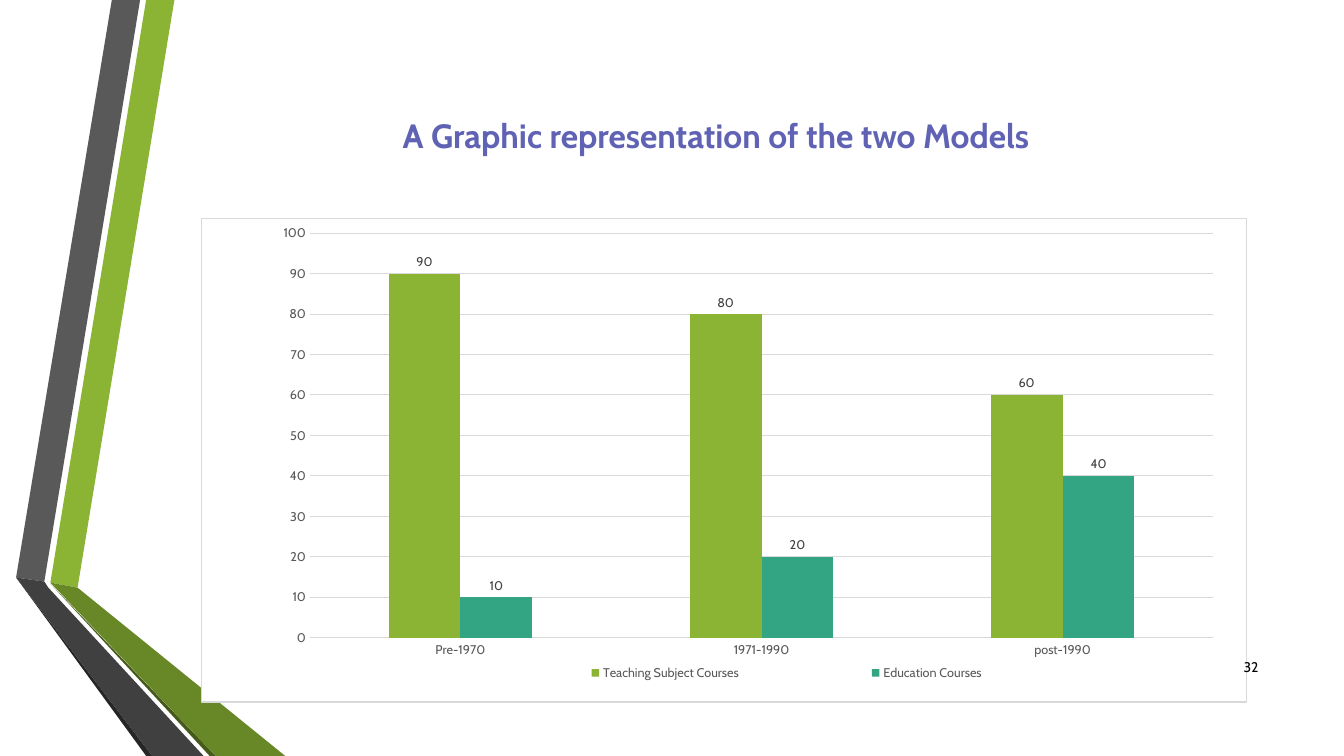
import dataclasses
from typing import Any

import pptx
import pptx.chart.data
import pptx.dml.color
import pptx.enum.chart
import pptx.enum.shapes
import pptx.enum.text
import pptx.oxml
import pptx.oxml.ns
import pptx.util

Inches = pptx.util.Inches
Pt = pptx.util.Pt
qn = pptx.oxml.ns.qn
CHART = pptx.enum.chart
ALIGN = pptx.enum.text.PP_ALIGN
FONT = "Cabin"
GREY, RULE = "595959", "D9D9D9"


@dataclasses.dataclass
class Band:
    fill: str
    points: list[tuple[float, float]]


@dataclasses.dataclass
class Series:
    name: str
    values: list[int]
    fill: str


BANDS = [
    Band("8BB434", [(0.5, 5.78), (0.77, 5.83), (1.73, 0), (1.45, 0)]),
    Band(GREY, [(1.39, 0), (1.11, 0), (0.16, 5.73), (0.44, 5.77)]),
    Band("262626", [(0.16, 5.73), (1.45, 7.5), (1.51, 7.5)]),
    Band("465A1A", [(0.5, 5.79), (2.08, 7.5), (2.14, 7.5)]),
    Band("688727", [(0.5, 5.78), (2.14, 7.5), (2.83, 7.5), (0.77, 5.83)]),
    Band("404040", [(2.02, 7.5), (0.48, 5.83), (0.44, 5.77), (0.16, 5.73),
                    (1.51, 7.5)]),
]
PERIODS = ["Pre-1970", "1971-1990", "post-1990"]
COURSES = [
    Series("Teaching Subject Courses", [90, 80, 60], "8BB434"),
    Series("Education Courses", [10, 20, 40], "33A583"),
]


def rgb(code: str) -> Any:
    return pptx.dml.color.RGBColor.from_string(code)


def apply(target: Any, values: dict[str, Any]) -> None:
    for name, value in values.items():
        setattr(target, name, value)


def style(font: Any, size: float, color: str, bold: bool = False) -> None:
    apply(font, {"name": FONT, "size": Pt(size), "bold": bold})
    font.color.rgb = rgb(color)


def place(shape: Any, left: float, top: float, width: float, height: float) -> None:
    apply(shape, {"left": Inches(left), "top": Inches(top),
                  "width": Inches(width), "height": Inches(height)})


def write(shape: Any, text: str, align: Any, size: float, color: str,
          bold: bool = False) -> None:
    frame = shape.text_frame
    apply(frame, {"word_wrap": True,
                  "vertical_anchor": pptx.enum.text.MSO_ANCHOR.MIDDLE})
    line = frame.paragraphs[0]
    line.alignment = align
    run = line.add_run()
    run.text = text
    style(run.font, size, color, bold)


def draw_band(slide: Any, band: Band) -> None:
    first, *rest = [(Inches(x), Inches(y)) for x, y in band.points]
    path = slide.shapes.build_freeform(*first)
    path.add_line_segments(rest, close=True)
    shape = path.convert_to_shape()
    shape.shadow.inherit = False
    shape.fill.solid()
    shape.fill.fore_color.rgb = rgb(band.fill)
    shape.line.fill.background()


def set_layout(parent: Any, index: int, box: tuple[float, ...], inner: bool) -> None:
    """Fix the place of a chart part, in fractions of the chart."""
    for old in parent.findall(qn("c:layout")):
        parent.remove(old)
    target = '<c:layoutTarget val="inner"/>' if inner else ""
    modes = "".join(f'<c:{key}Mode val="edge"/>' for key in "xy")
    sizes = "".join(f'<c:{key} val="{size}"/>' for key, size in zip("xywh", box))
    parent.insert(index, pptx.oxml.parse_xml(
        f'<c:layout {pptx.oxml.ns.nsdecls("c")}><c:manualLayout>'
        f"{target}{modes}{sizes}</c:manualLayout></c:layout>"))


def frame_chart(chart: Any) -> None:
    chart._chartSpace.chart.addnext(pptx.oxml.parse_xml(
        f'<c:spPr {pptx.oxml.ns.nsdecls("c", "a")}>'
        '<a:solidFill><a:srgbClr val="FFFFFF"/></a:solidFill>'
        f'<a:ln w="{Pt(0.75)}"><a:solidFill><a:srgbClr val="{RULE}"/>'
        "</a:solidFill></a:ln></c:spPr>"))


def rule(line: Any) -> None:
    line.width = Pt(0.75)
    line.color.rgb = rgb(RULE)


def draw_chart(slide: Any) -> None:
    data = pptx.chart.data.CategoryChartData()
    data.categories = PERIODS
    for course in COURSES:
        data.add_series(course.name, course.values)
    chart = slide.shapes.add_chart(
        CHART.XL_CHART_TYPE.COLUMN_CLUSTERED, Inches(1.99), Inches(2.16),
        Inches(10.38), Inches(4.81), data).chart
    apply(chart, {"has_title": False, "has_legend": True})
    style(chart.font, 10, "000000")
    frame_chart(chart)

    # Bars and their values
    plot = chart.plots[0]
    apply(plot, {"gap_width": 219, "overlap": 0, "vary_by_categories": False})
    for course, bars in zip(COURSES, plot.series):
        bars.format.fill.solid()
        bars.format.fill.fore_color.rgb = rgb(course.fill)
        labels = bars.data_labels
        apply(labels, {"show_value": True,
                       "position": CHART.XL_LABEL_POSITION.OUTSIDE_END})
        style(labels.font, 9, "404040")

    # Axes
    for axis in (chart.category_axis, chart.value_axis):
        apply(axis, {"major_tick_mark": CHART.XL_TICK_MARK.NONE,
                     "minor_tick_mark": CHART.XL_TICK_MARK.NONE})
        style(axis.tick_labels.font, 9, GREY)
    rule(chart.category_axis.format.line)
    scale = chart.value_axis
    apply(scale, {"minimum_scale": 0, "maximum_scale": 100, "major_unit": 10,
                  "has_major_gridlines": True})
    scale.format.line.fill.background()
    rule(scale.major_gridlines.format.line)

    # Legend and plot area
    legend = chart.legend
    apply(legend, {"position": CHART.XL_LEGEND_POSITION.BOTTOM,
                   "include_in_layout": False})
    style(legend.font, 9, GREY)
    root = chart._chartSpace.chart
    set_layout(root.find(qn("c:legend")), 1, (0.25, 0.91, 0.62, 0.06), False)
    set_layout(root.plotArea, 0, (0.104, 0.031, 0.864, 0.836), True)


def main() -> None:
    deck = pptx.Presentation()
    apply(deck, {"slide_width": Inches(13.33), "slide_height": Inches(7.5)})
    slide = deck.slides.add_slide(deck.slide_layouts[5])

    # Side ribbon
    for band in BANDS:
        draw_band(slide, band)

    # Title
    title = slide.shapes.title
    place(title, 1.62, 0.75, 10.96, 1.18)
    write(title, "A Graphic representation of the two Models",
          ALIGN.CENTER, 24, "6063B4", True)

    draw_chart(slide)

    # Slide number
    number = slide.shapes.add_textbox(0, 0, 0, 0)
    place(number, 11.98, 6.42, 0.6, 0.4)
    write(number, "32", ALIGN.RIGHT, 10, "000000")

    deck.save("out.pptx")


if __name__ == "__main__":
    main()
